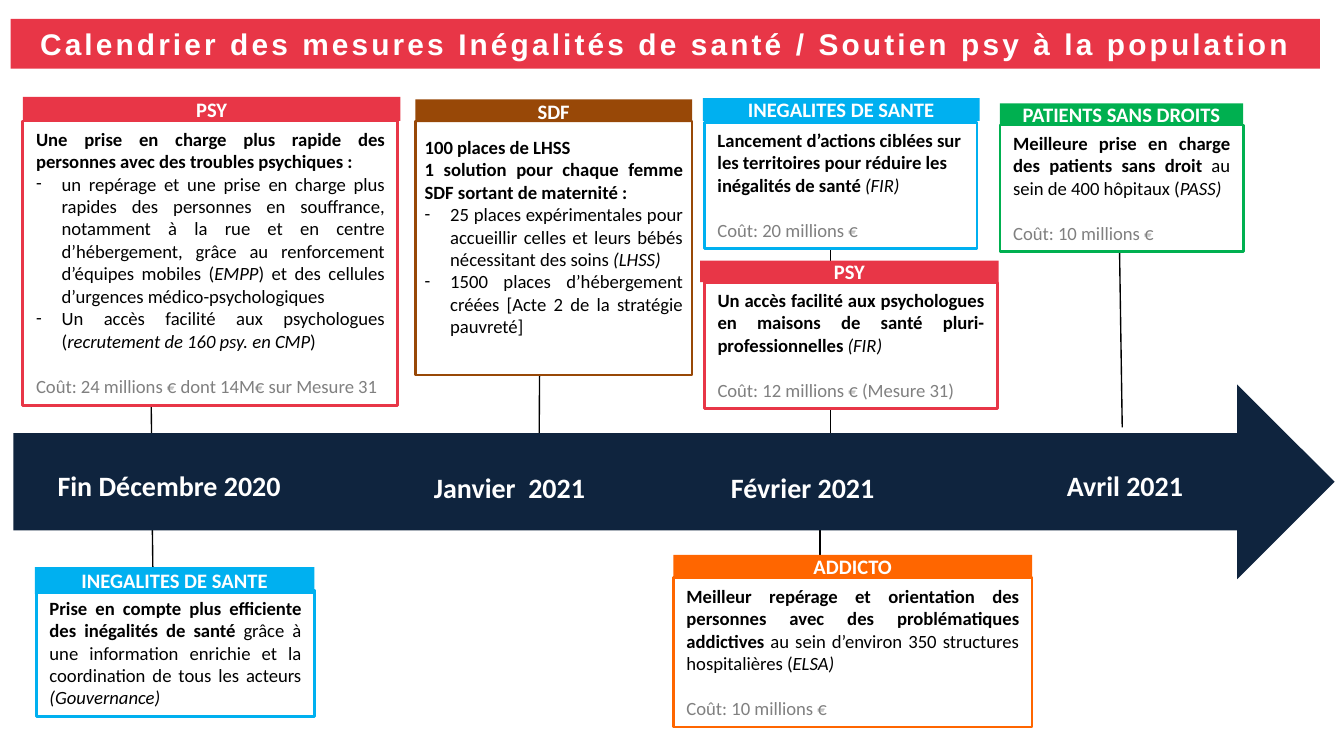
import pptx
import pptx.dml.color
import pptx.enum.shapes
import pptx.enum.text
import pptx.oxml.ns
import pptx.util
from lxml import etree

RGBColor = pptx.dml.color.RGBColor
Inches, Pt = pptx.util.Inches, pptx.util.Pt
SHAPES = pptx.enum.shapes.MSO_SHAPE
ALIGN, ANCHOR = pptx.enum.text.PP_ALIGN, pptx.enum.text.MSO_ANCHOR
qn = pptx.oxml.ns.qn

SLIDE_WIDTH = Inches(10)
SLIDE_HEIGHT = SLIDE_WIDTH * 9 // 16

RED, BLUE, GREEN = RGBColor(232, 54, 71), RGBColor(0, 176, 240), RGBColor(0, 176, 80)
BROWN, ORANGE, NAVY = RGBColor(152, 72, 7), RGBColor(255, 102, 0), RGBColor(15, 36, 62)
BLACK, GREY, WHITE = RGBColor(0, 0, 0), RGBColor(128, 128, 128), RGBColor(255, 255, 255)

# Content: a paragraph is (kind, (text, style), ...), style "b" bold, "i" italic
TITLE = "Calendrier des mesures Inégalités de santé / Soutien psy à la population"

# Boxes are left, top, width, height in inches
CARDS = [
    {"name": "PSY", "color": RED,
     "header": (0.17, 0.72, 2.81, 0.18), "body": (0.17, 0.9, 2.79, 2.12),
     "text": [
         ("plain", ("Une prise en charge plus rapide des personnes avec des troubles psychiques :", "b")),
         ("dash", ("un repérage et une prise en charge plus rapides des personnes en souffrance, "
                   "notamment à la rue et en centre d’hébergement, grâce au renforcement "
                   "d’équipes mobiles (", ""), ("EMPP", "i"),
          (") et des cellules d’urgences médico-psychologiques", "")),
         ("dash", ("Un accès facilité aux psychologues (", ""),
          ("recrutement de 160 psy. en CMP", "i"), (")", "")),
         ("cost", ("Coût: 24 millions € dont 14M€ sur Mesure 31", ""))]},
    {"name": "SDF", "color": BROWN,
     "header": (3.09, 0.74, 2.06, 0.17), "body": (3.09, 0.9, 2.06, 1.89),
     "frame": {"vertical_anchor": ANCHOR.MIDDLE, "margin_left": Inches(0.07),
               "margin_right": Inches(0.07), "margin_top": Inches(0.03),
               "margin_bottom": Inches(0.2)},
     "text": [
         ("plain", ("100 places de LHSS", "b")),
         ("plain", ("1 solution pour chaque femme SDF sortant de maternité :", "b")),
         ("dash", ("25 places expérimentales pour accueillir celles et leurs bébés "
                   "nécessitant des soins ", ""), ("(LHSS)", "i")),
         ("dash", ("1500 places d’hébergement créées [Acte 2 de la stratégie pauvreté]", ""))]},
    {"name": "INEGALITES DE SANTE", "color": BLUE,
     "header": (5.23, 0.73, 2.06, 0.17), "body": (5.24, 0.91, 2.03, 0.94),
     "text": [
         ("left", ("Lancement d’actions ciblées sur les territoires pour réduire les "
                   "inégalités de santé ", "b"), ("(FIR)", "i")),
         ("cost", ("Coût: 20 millions €", ""))]},
    {"name": "PSY", "color": RED,
     "header": (5.21, 1.94, 2.22, 0.16), "body": (5.24, 2.1, 2.18, 0.94),
     "text": [
         ("plain", ("Un accès facilité aux psychologues en maisons de santé "
                    "pluri-professionnelles ", "b"), ("(FIR)", "i")),
         ("cost", ("Coût: 12 millions € (Mesure 31)", ""))]},
    {"name": "PATIENTS SANS DROITS", "color": GREEN,
     "header": (7.44, 0.77, 1.81, 0.16), "body": (7.44, 0.93, 1.81, 0.94),
     "text": [
         ("plain", ("Meilleure prise en charge des patients sans droit ", "b"),
          ("au sein de 400 hôpitaux (", ""), ("PASS)", "i")),
         ("cost", ("Coût: 10 millions €", ""))]},
    {"name": "INEGALITES DE SANTE", "color": BLUE,
     "header": (0.26, 4.22, 2.08, 0.2), "body": (0.27, 4.39, 2.07, 0.94),
     "text": [
         ("plain", ("Prise en compte plus efficiente des inégalités de santé ", "b"),
          ("grâce à une information enrichie et la coordination de tous les acteurs ", ""),
          ("(Gouvernance)", "i"))]},
    {"name": "ADDICTO", "color": ORANGE,
     "header": (5.01, 4.13, 2.67, 0.17), "body": (5.01, 4.3, 2.67, 1.11),
     "text": [
         ("plain", ("Meilleur repérage et orientation des personnes avec des "
                    "problématiques addictives", "b"),
          (" au sein d’environ 350 structures hospitalières (", ""), ("ELSA)", "i")),
         ("cost", ("Coût: 10 millions €", ""))]},
]
DATES = [("Fin Décembre 2020", (0.33, 3.44, 2.01, 0.35)),
         ("Janvier  2021", (3.13, 3.45, 1.48, 0.35)),
         ("Février 2021", (5.34, 3.45, 1.47, 0.35)),
         ("Avril 2021", (7.84, 3.44, 1.86, 0.35))]
# Links from cards to the timeline: x, y of each end
LINKS = [(6.1, 3.68, 6.1, 5.25), (1.13, 3.62, 1.15, 5.3), (6.18, 1.72, 6.18, 3.29),
         (1.11, 1.74, 1.13, 3.42), (4.02, 2.02, 4.01, 3.53), (8.33, 1.86, 8.35, 3.18)]

KINDS = {
    "plain": {"alignment": ALIGN.JUSTIFY},
    "left": {"alignment": ALIGN.LEFT},
    "dash": {"alignment": ALIGN.JUSTIFY},
    "cost": {"alignment": ALIGN.JUSTIFY, "space_before": Pt(12.2)},
}


def apply(target, values):
    for name, value in values.items():
        setattr(target, name, value)


def add_span(para, text, size, color, font="Calibri", bold=False, italic=False):
    span = para.add_run()
    span.text = text
    apply(span.font, {"name": font, "size": Pt(size), "bold": bold, "italic": italic})
    span.font.color.rgb = color
    return span


def add_box(slide, kind, place, fill, line=None):
    box = slide.shapes.add_shape(kind, *map(Inches, place))
    box.shadow.inherit = False
    box.fill.solid()
    box.fill.fore_color.rgb = fill
    if line is None:
        box.line.fill.background()
    else:
        box.line.color.rgb = line
        box.line.width = Pt(1.5)
    return box


def add_dash(para):
    props = para._p.get_or_add_pPr()
    for name, length in (("marL", 0.19), ("indent", -0.19)):
        props.set(name, str(Inches(length)))
    etree.SubElement(props, qn("a:buFont")).set("typeface", "Calibri")
    etree.SubElement(props, qn("a:buChar")).set("char", "-")


def add_link(slide, ends):
    link = slide.shapes.add_connector(
        pptx.enum.shapes.MSO_CONNECTOR.STRAIGHT, *map(Inches, ends))
    link.line.color.rgb = BLACK
    link.line.width = Pt(0.75)
    etree.SubElement(link._element.spPr, qn("a:effectLst"))


def add_card_body(slide, card):
    frame = add_box(slide, SHAPES.RECTANGLE, card["body"], WHITE, card["color"]).text_frame
    apply(frame, {"word_wrap": True, "vertical_anchor": ANCHOR.TOP, **card.get("frame", {})})
    for index, (kind, *spans) in enumerate(card["text"]):
        para = frame.add_paragraph() if index else frame.paragraphs[0]
        apply(para, KINDS[kind])
        if kind == "dash":
            add_dash(para)
        for text, style in spans:
            add_span(para, text, 10, GREY if kind == "cost" else BLACK,
                     bold=style == "b", italic=style == "i")


def add_card_header(slide, card):
    frame = add_box(slide, SHAPES.RECTANGLE, card["header"], card["color"]).text_frame
    apply(frame, {"word_wrap": True, "vertical_anchor": ANCHOR.MIDDLE})
    frame.paragraphs[0].alignment = ALIGN.CENTER
    add_span(frame.paragraphs[0], card["name"], 11, WHITE, bold=True)


def add_title(slide):
    title = slide.shapes.title
    apply(title, dict(zip(("left", "top", "width", "height"),
                          map(Inches, (0.08, 0.14, 9.74, 0.37)))))
    title.fill.solid()
    title.fill.fore_color.rgb = RED
    apply(title.text_frame, {"word_wrap": True, "vertical_anchor": ANCHOR.MIDDLE,
                             "auto_size": pptx.enum.text.MSO_AUTO_SIZE.NONE})
    para = title.text_frame.paragraphs[0]
    para.alignment = ALIGN.CENTER
    span = add_span(para, TITLE, 16, WHITE, "Arial", bold=True)
    span.font._element.set("spc", "170")  # letter spacing, 1.7 pt


def main():
    deck = pptx.Presentation()
    apply(deck, {"slide_width": SLIDE_WIDTH, "slide_height": SLIDE_HEIGHT})
    slide = deck.slides.add_slide(deck.slide_layouts[5])
    add_title(slide)

    # Links lie behind the cards and the timeline
    for ends in LINKS:
        add_link(slide, ends)

    # Timeline arrow and its dates
    add_box(slide, SHAPES.RIGHT_ARROW, (0.1, 2.86, 9.83, 1.45), NAVY)
    for text, place in DATES:
        label = slide.shapes.add_textbox(*map(Inches, place))
        label.text_frame.word_wrap = True
        add_span(label.text_frame.paragraphs[0], text, 15, WHITE, bold=True)

    # Cards, headers above bodies
    for card in CARDS:
        add_card_body(slide, card)
    for card in CARDS:
        add_card_header(slide, card)
    deck.save("out.pptx")


if __name__ == "__main__":
    main()
